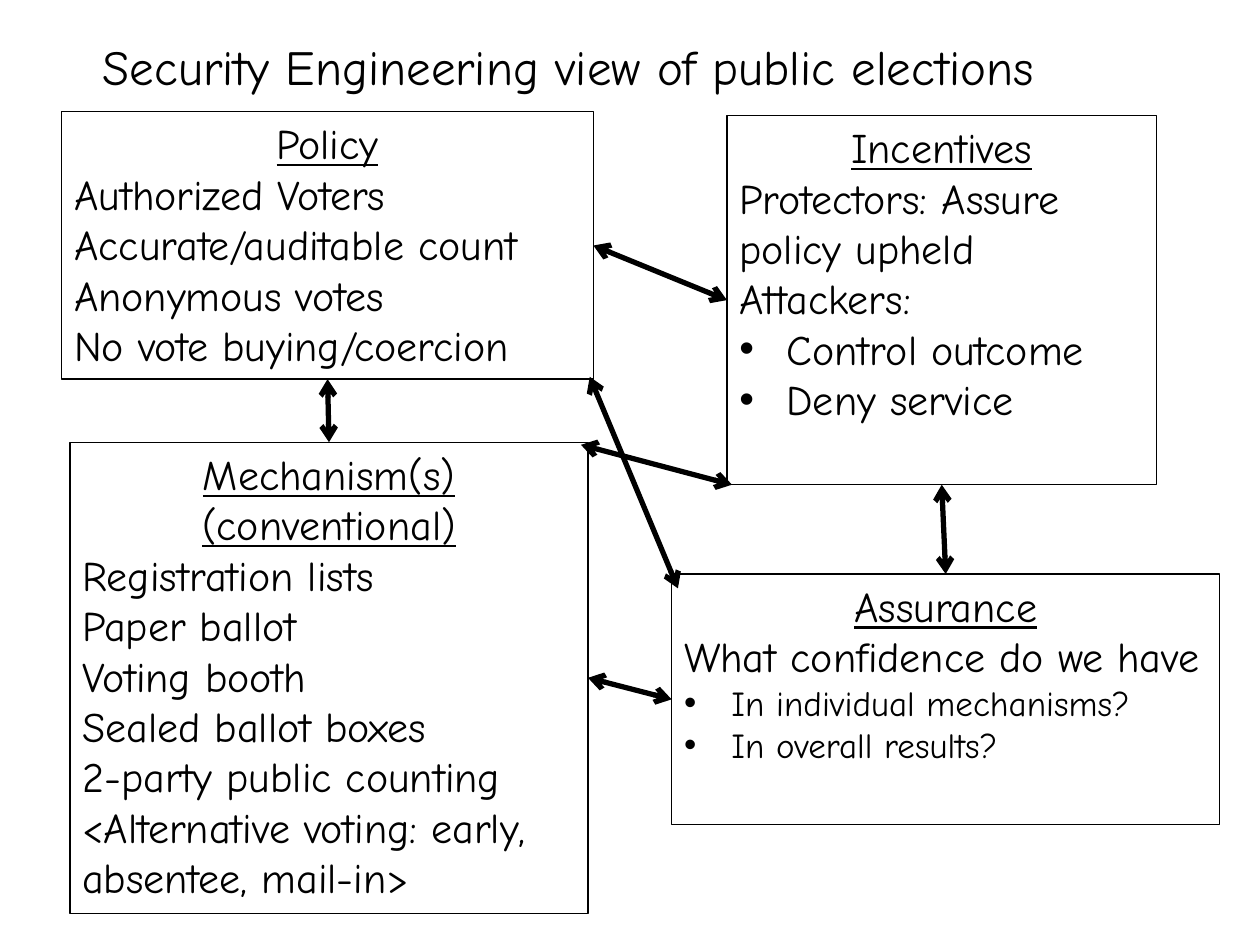
from lxml.etree import SubElement
from pptx import Presentation
from pptx.dml.color import RGBColor
from pptx.enum.shapes import MSO_CONNECTOR, MSO_SHAPE
from pptx.enum.text import MSO_ANCHOR, PP_ALIGN
from pptx.oxml.ns import qn
from pptx.util import Pt

FONT = "Comic Neue"
INK = "000000"
TOP, LEFT, BOTTOM, RIGHT = range(4)  # connection sites of a rectangle


def color(hex_code):
    return RGBColor.from_string(hex_code)


def style(paragraph, size, align=PP_ALIGN.LEFT, underline=None):
    paragraph.alignment = align
    font = paragraph.font
    font.name, font.size, font.underline = FONT, Pt(size), underline
    font.color.rgb = color(INK)


def add_bullet(paragraph):
    properties = paragraph._p.get_or_add_pPr()
    properties.set("marL", str(Pt(27)))
    properties.set("indent", str(-Pt(27)))
    bullet_font = SubElement(properties, qn("a:buFont"))
    bullet_font.set("typeface", "Arial")
    SubElement(properties, qn("a:buChar")).set("char", "•")
    # Bullet elements come before the default run properties
    properties.append(properties.find(qn("a:defRPr")))


def add_title(slide, text):
    title = slide.shapes.add_textbox(Pt(51.8), Pt(0), Pt(612), Pt(74.9))
    frame = title.text_frame
    frame.word_wrap = True
    frame.vertical_anchor = MSO_ANCHOR.MIDDLE
    frame.text = text
    style(frame.paragraphs[0], 28)


def add_topic(slide, bounds, heading, lines, bullets=(), bullet_size=24):
    topic = slide.shapes.add_shape(MSO_SHAPE.RECTANGLE, *map(Pt, bounds))
    topic.shadow.inherit = False
    topic.fill.background()
    topic.line.color.rgb = color(INK)
    topic.line.width = Pt(0.75)

    frame = topic.text_frame
    frame.word_wrap = True
    frame.vertical_anchor = MSO_ANCHOR.TOP
    frame.text = "\n".join([heading, *lines, *bullets])
    paragraphs = frame.paragraphs
    style(paragraphs[0], 24, PP_ALIGN.CENTER, underline=True)
    first_bullet = 1 + len(lines)
    for paragraph in paragraphs[1:first_bullet]:
        style(paragraph, 24)
    for paragraph in paragraphs[first_bullet:]:
        style(paragraph, bullet_size)
        add_bullet(paragraph)
    return topic


def add_arrow(slide, start=(0, 0), end=(0, 0)):
    arrow = slide.shapes.add_connector(MSO_CONNECTOR.STRAIGHT, *map(Pt, (*start, *end)))
    arrow.line.color.rgb = color(INK)
    arrow.line.width = Pt(3)
    outline = arrow.line._get_or_add_ln()
    for tip in ("a:headEnd", "a:tailEnd"):
        SubElement(outline, qn(tip)).set("type", "arrow")
    SubElement(arrow._element.spPr, qn("a:effectLst"))
    return arrow


def link(slide, source, source_site, target, target_site):
    arrow = add_arrow(slide)
    arrow.begin_connect(source, source_site)
    arrow.end_connect(target, target_site)


def main():
    presentation = Presentation()
    presentation.slide_width, presentation.slide_height = Pt(720), Pt(540)
    slide = presentation.slides.add_slide(presentation.slide_layouts[6])

    add_title(slide, "Security Engineering view of public elections")

    # The four topics
    policy = add_topic(
        slide, (35.3, 63.9, 303.8, 152.8), "Policy",
        ["Authorized Voters", "Accurate/auditable count", "Anonymous votes",
         "No vote buying/coercion"])
    mechanisms = add_topic(
        slide, (40, 252.7, 296, 269.3), "Mechanism(s) (conventional)",
        ["Registration lists", "Paper ballot", "Voting booth", "Sealed ballot boxes",
         "2-party public counting", "<Alternative voting: early, absentee, mail-in>"])
    incentives = add_topic(
        slide, (415.4, 66, 245.5, 211), "Incentives",
        ["Protectors: Assure policy upheld", "Attackers:"],
        ["Control outcome", "Deny service"])
    assurance = add_topic(
        slide, (383.8, 328, 313.2, 143.3), "Assurance",
        ["What confidence do we have"],
        ["In individual mechanisms?", "In overall results?"], bullet_size=20)

    # Links between neighbouring topics
    link(slide, incentives, LEFT, policy, RIGHT)
    link(slide, assurance, LEFT, mechanisms, RIGHT)
    link(slide, policy, BOTTOM, mechanisms, TOP)
    link(slide, incentives, BOTTOM, assurance, TOP)

    # Diagonal links between corners
    add_arrow(slide, (418.3, 277), (332, 254.2))
    add_arrow(slide, (337, 215.3), (387.4, 336.2))

    presentation.save("out.pptx")


if __name__ == "__main__":
    main()
